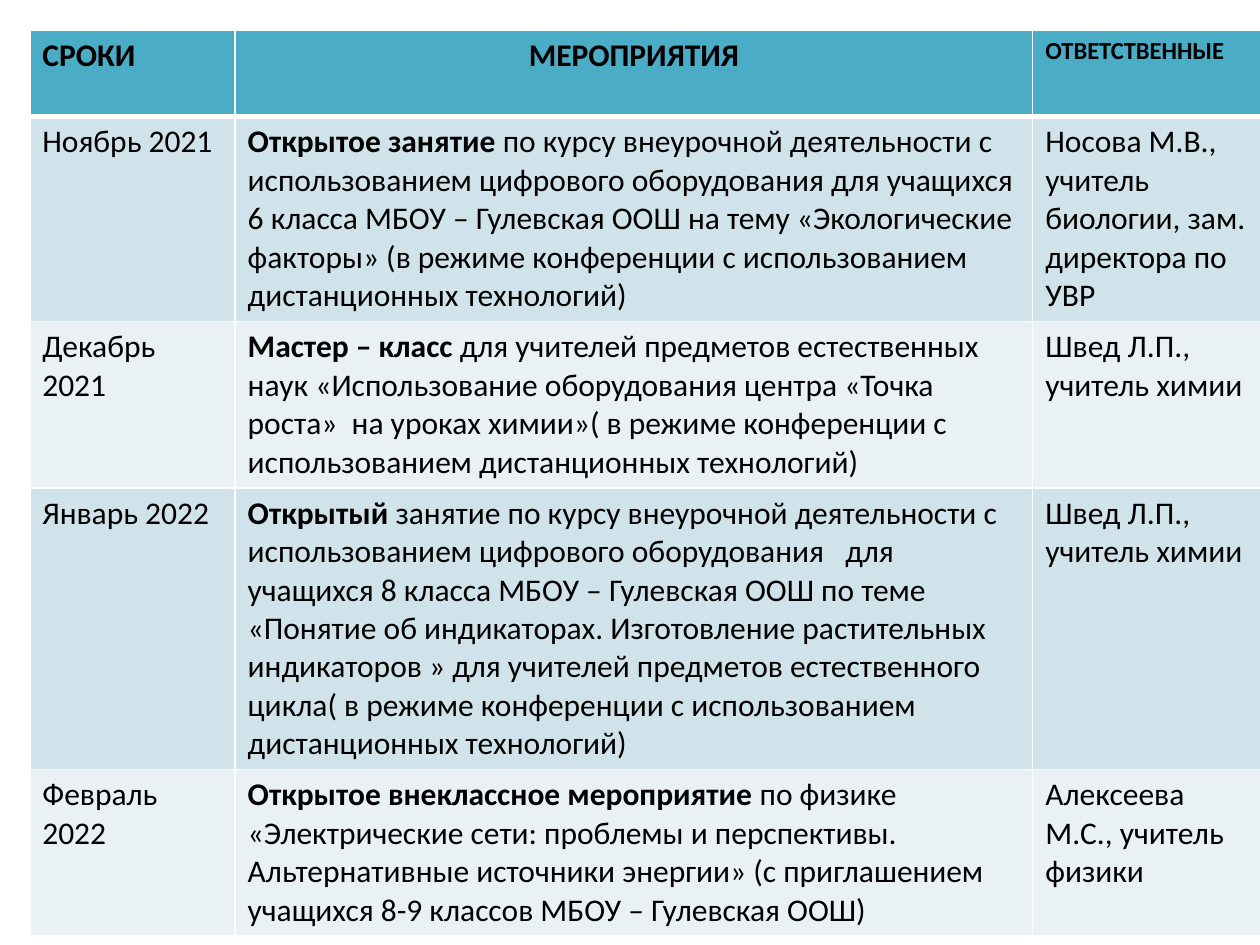
"""Build a one-slide schedule of school events as a table."""
from lxml import etree
from pptx import Presentation
from pptx import util as u
from pptx.dml.color import RGBColor
from pptx.enum import text
from pptx.oxml import ns

COLORS = {"head": "4BACC6", "odd": "D0E3EA", "even": "E9F1F5",
          "line": "FFFFFF", "text": "000000"}
COLS = [4.14, 16.08, 4.6]
ROWS = [1.75, 4.09, 3.28, 5.54, 3.28]
HEAD = ["СРОКИ", "МЕРОПРИЯТИЯ", "ОТВЕТСТВЕННЫЕ"]
EVENTS = [
    ("Ноябрь 2021", "Открытое занятие ",
     "по курсу внеурочной деятельности с использованием цифрового оборудования "
     "для учащихся 6 класса МБОУ – Гулевская ООШ на тему «Экологические факторы» "
     "(в режиме конференции с использованием  дистанционных технологий)",
     "Носова М.В., учитель биологии, зам. директора по УВР"),
    ("Декабрь 2021", "Мастер – класс ",
     "для учителей предметов естественных наук «Использование оборудования центра "
     "«Точка роста»  на уроках химии»( в режиме конференции с использованием "
     "дистанционных технологий)",
     "Швед Л.П., учитель химии"),
    ("Январь 2022", "Открытый ",
     "занятие по курсу внеурочной деятельности с использованием цифрового "
     "оборудования   для учащихся 8 класса МБОУ – Гулевская ООШ по теме «Понятие об "
     "индикаторах. Изготовление растительных индикаторов » для учителей предметов "
     "естественного цикла( в режиме конференции с использованием дистанционных "
     "технологий)",
     "Швед Л.П., учитель химии"),
    ("Февраль 2022", "Открытое внеклассное мероприятие ",
     "по физике «Электрические сети: проблемы и перспективы. Альтернативные источники "
     "энергии» (с приглашением учащихся 8-9 классов МБОУ – Гулевская ООШ)",
     "Алексеева М.С., учитель физики"),
]


class Deck:
    """Holds the style and the current slide."""

    def __init__(self, prs, font="Calibri", size=18):
        self.font, self.size = font, size
        self.s = prs.slides.add_slide(prs.slide_layouts[6])

    def table(self, left, top, cols, rows):
        """Add an empty table with the given column widths and row heights."""
        tbl = self.s.shapes.add_table(len(rows), len(cols), u.Cm(left), u.Cm(top),
                                      u.Cm(sum(cols)), u.Cm(sum(rows))).table
        for col, width in zip(tbl.columns, cols):
            col.width = u.Cm(width)
        for row, height in zip(tbl.rows, rows):
            row.height = u.Cm(height)
        return tbl

    def borders(self, cell, top=1, bottom=1):
        """Draw the four cell borders, widths in points."""
        tc_pr = cell._tc.get_or_add_tcPr()
        for side, width in (("L", 1), ("R", 1), ("T", top), ("B", bottom)):
            ln = etree.SubElement(tc_pr, ns.qn(f"a:ln{side}"), w=str(u.Pt(width)))
            fill = etree.SubElement(ln, ns.qn("a:solidFill"))
            etree.SubElement(fill, ns.qn("a:srgbClr"), val=COLORS["line"])

    def cell(self, cell, runs, fill, size=None, align=None, top=1, bottom=1):
        """Fill a cell with (text, bold) runs."""
        self.borders(cell, top, bottom)
        cell.fill.solid()
        cell.fill.fore_color.rgb = RGBColor.from_string(COLORS[fill])
        p = cell.text_frame.paragraphs[0]
        p.alignment = align
        p.font.name, p.font.size = self.font, u.Pt(size or self.size)
        for words, bold in runs:
            r = p.add_run()
            r.text = words
            r.font.name, r.font.size = self.font, u.Pt(size or self.size)
            r.font.bold = bold
            r.font.color.rgb = RGBColor.from_string(COLORS["text"])


def main():
    """Build and save the slide."""
    prs = Presentation()
    prs.slide_width, prs.slide_height = u.Cm(25.4), u.Cm(19.05)
    deck = Deck(prs)
    tbl = deck.table(0.6, 0.6, COLS, ROWS)
    aligns = [None, text.PP_ALIGN.CENTER, None]
    for c, (title, size, align) in enumerate(zip(HEAD, (18, 18, 14), aligns)):
        deck.cell(tbl.cell(0, c), [(title, True)], "head", size, align, bottom=3)
    for i, (date, kind, about, person) in enumerate(EVENTS, 1):
        cells = [[(date, False)], [(kind, True), (about, False)], [(person, False)]]
        for c, runs in enumerate(cells):
            deck.cell(tbl.cell(i, c), runs, "odd" if i % 2 else "even",
                      top=3 if i == 1 else 1)
    prs.save("out.pptx")


if __name__ == "__main__":
    main()
